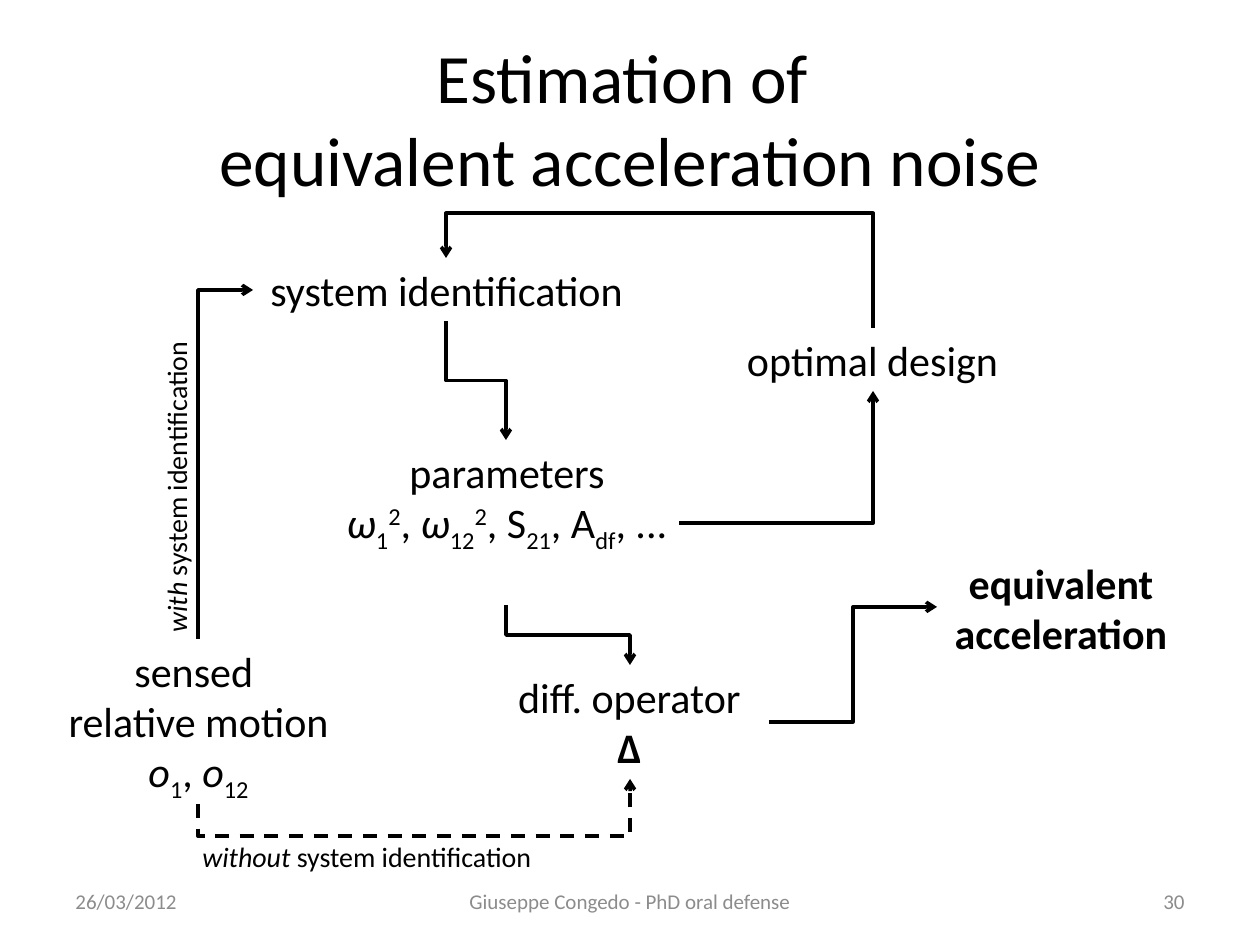
from dataclasses import dataclass

from lxml.etree import SubElement
from pptx import Presentation
from pptx.dml.color import RGBColor
from pptx.enum.dml import MSO_LINE_DASH_STYLE as DASH
from pptx.enum.shapes import MSO_CONNECTOR as CONN
from pptx.enum.text import MSO_ANCHOR as ANCHOR, PP_ALIGN as ALIGN
from pptx.oxml.ns import qn
from pptx.util import Emu, Pt

SCALE = 914400 / 126  # EMU in one px
BLACK, GRAY = "000000", "8C8C8C"
I, B = {"italic": True}, {"bold": True}
SUB, SUP = -25000, 30000


def px(n: float) -> Emu:
    return Emu(round(n * SCALE))


def rgb(value: str) -> RGBColor:
    return RGBColor.from_string(value)


@dataclass
class Label:
    box: tuple[int, int, int, int]
    paras: list  # each paragraph is a list of (text, format or baseline)
    size: float = 24
    align: ALIGN = ALIGN.CENTER
    color: str = BLACK
    anchor: ANCHOR = ANCHOR.TOP
    rotation: int = 0


@dataclass
class Arrow:
    start: tuple[int, int]
    end: tuple[int, int]
    vertical: bool = True  # direction of the first segment
    corner: bool = False  # one bend only
    bend: float = 0.5  # place of the middle segment
    dashed: bool = False


def plain(text: str) -> list:
    return [(text, {})]


def footer(x: int, w: int, text: str, align: ALIGN) -> Label:
    return Label((x, 876, w, 50), [plain(text)], 12, align, GRAY, ANCHOR.MIDDLE)


def draw_label(s, label: Label) -> None:
    sp = s.shapes.add_textbox(*map(px, label.box))
    sp.rotation = label.rotation
    tf = sp.text_frame
    tf.word_wrap = True
    tf.vertical_anchor = label.anchor
    for n, runs in enumerate(label.paras):
        p = tf.add_paragraph() if n else tf.paragraphs[0]
        p.alignment = label.align
        for text, style in runs:
            if text == "\v":
                p.add_line_break()
                continue
            r = p.add_run()
            r.text = text
            r.font.color.rgb = rgb(label.color)
            fmt = {"name": "Calibri", "size": Pt(label.size)}
            if isinstance(style, int):
                r._r.get_or_add_rPr().set("baseline", str(style))
            else:
                fmt |= style
            for key, value in fmt.items():
                setattr(r.font, key, value)


def draw_arrow(s, arrow: Arrow) -> None:
    (x1, y1), (x2, y2) = arrow.start, arrow.end
    rotation = 0
    # An arrow that starts vertically is a horizontal one turned about its centre
    if arrow.vertical:
        cx, cy = (x1 + x2) / 2, (y1 + y2) / 2
        dx, dy = y2 - y1, x1 - x2
        rotation = 90
        if (dx < 0) != (dy < 0):
            dx, dy, rotation = -dx, -dy, 270
        x1, y1, x2, y2 = cx - dx / 2, cy - dy / 2, cx + dx / 2, cy + dy / 2
    cxn = s.shapes.add_connector(CONN.ELBOW, px(x1), px(y1), px(x2), px(y2))
    cxn.rotation = rotation
    cxn.line.color.rgb = rgb(BLACK)
    cxn.line.width = Pt(2)
    if arrow.dashed:
        cxn.line.dash_style = DASH.DASH

    # Bend, arrowhead and no shadow
    spPr = cxn._element.spPr
    geom = spPr.find(qn("a:prstGeom"))
    if arrow.corner:
        geom.set("prst", "bentConnector2")
    else:
        SubElement(geom.find(qn("a:avLst")), qn("a:gd"), name="adj1",
                   fmla=f"val {round(arrow.bend * 100000)}")
    SubElement(spPr.find(qn("a:ln")), qn("a:tailEnd"), type="arrow")
    SubElement(spPr, qn("a:effectLst"))


LABELS = [
    # Title and footer
    Label((63, 38, 1134, 158),
          [[("Estimation of ", {}), ("\v", {}), ("equivalent acceleration noise", {})]],
          39.6, anchor=ANCHOR.MIDDLE),
    footer(63, 294, "26/03/2012", ALIGN.LEFT),
    footer(392, 476, "Giuseppe Congedo - PhD oral defense", ALIGN.CENTER),
    footer(903, 294, "30", ALIGN.RIGHT),
    # Steps of the estimation
    Label((-5, 639, 407, 165),
          [plain("sensed "), plain("relative motion"),
           [("o", I), ("1", SUB), (", ", {}), ("o", I), ("12", SUB)]]),
    Label((253, 258, 387, 63), [plain("system identification")]),
    Label((333, 440, 348, 165),
          [plain("parameters"),
           [("ω", I), ("1", SUB), ("2", SUP), (", ", {}),
            ("ω", I), ("12", SUB), ("2", SUP), (", S", {}), ("21", SUB),
            (", A", {}), ("df", SUB), (", ...", {})]]),
    Label((491, 665, 277, 115), [plain("diff. operator"), [("Δ", B)]]),
    Label((937, 551, 248, 115), [[("equivalent acceleration", B)]]),
    Label((679, 328, 387, 63), [plain("optimal design")]),
    # Captions of the two routes
    Label((-83, 362, 519, 47), [[("with", I), (" system identification", {})]],
          16, ALIGN.LEFT, rotation=270),
    Label((190, 833, 519, 47), [[("without", I), (" system identification", {})]],
          16, ALIGN.LEFT),
]

ARROWS = [
    Arrow((198, 639), (253, 290), corner=True),  # motion to identification
    Arrow((446, 321), (506, 440)),  # identification to parameters
    Arrow((506, 605), (630, 665)),  # parameters to operator
    Arrow((769, 722), (937, 607), vertical=False),  # operator to acceleration
    Arrow((198, 804), (630, 779), bend=-1.29, dashed=True),  # motion to operator
    Arrow((679, 523), (873, 391), vertical=False, corner=True),  # parameters to design
    Arrow((873, 328), (446, 258), bend=1.64),  # design to identification
]


def main() -> None:
    prs = Presentation()
    prs.slide_width, prs.slide_height = px(1260), px(945)
    s = prs.slides.add_slide(prs.slide_layouts[6])
    for label in LABELS:
        draw_label(s, label)
    for arrow in ARROWS:
        draw_arrow(s, arrow)
    prs.save("out.pptx")


if __name__ == "__main__":
    main()
